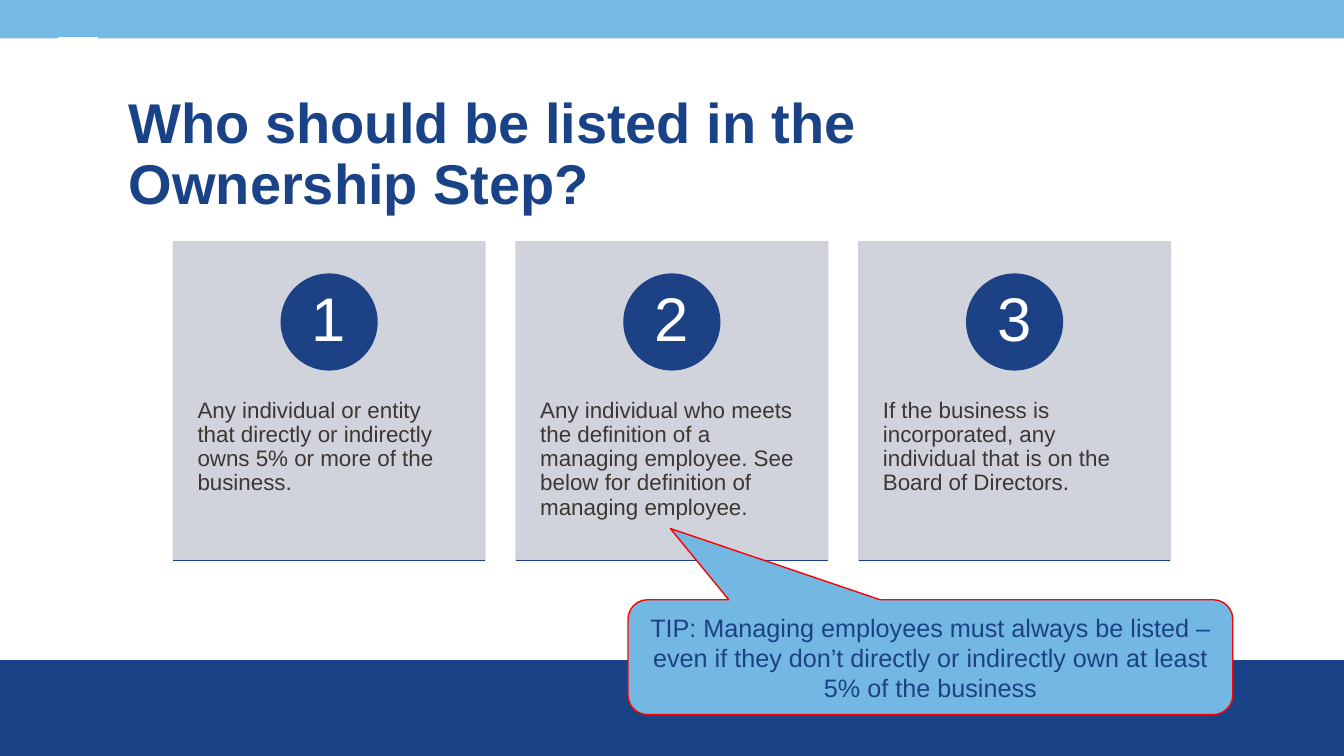
from dataclasses import dataclass

from lxml import etree
from pptx import Presentation
from pptx import util as u
from pptx.dml.color import RGBColor
from pptx.enum import shapes, text
from pptx.oxml.ns import qn


@dataclass(frozen=True)
class Theme:
    font: str = "Arial"
    footer: str = "1A4387"
    header: str = "75B9E5"
    white: str = "FFFFFF"
    card: str = "CDCFD9"
    accent: str = "1C4285"
    body: str = "3D3633"
    tip: str = "73B8E3"
    tip_line: str = "FF0000"
    title_size: int = 40
    number_size: int = 44
    body_size: int = 16
    tip_size: int = 18


theme = Theme()
Kind = shapes.MSO_SHAPE
Align = text.PP_ALIGN
Anchor = text.MSO_ANCHOR

deck = Presentation()
deck.slide_width, deck.slide_height = u.Pt(960), u.Pt(540)
page = deck.slides.add_slide(deck.slide_layouts[6])


def add_block(kind, left, top, width, height, fill, line=None, alpha=None):
    """Add a preset shape; alpha is the opacity of fill and line in percent."""
    block = page.shapes.add_shape(kind, u.Pt(left), u.Pt(top), u.Pt(width), u.Pt(height))
    block.shadow.inherit = False
    block.fill.solid()
    block.fill.fore_color.rgb = RGBColor.from_string(fill)
    if line:
        block.line.color.rgb = RGBColor.from_string(line)
        block.line.width = u.Pt(1)
    else:
        block.line.fill.background()
    if alpha:
        for color in block._element.spPr.iter(qn("a:srgbClr")):
            etree.SubElement(color, qn("a:alpha")).set("val", str(alpha * 1000))
    return block


def write(box, *lines, size, color, bold=False, align=Align.LEFT, anchor=Anchor.TOP,
          spacing=1.0, inset=(7.2, 3.6)):
    frame = box.text_frame
    frame.word_wrap = True
    frame.vertical_anchor = anchor
    frame.margin_left = frame.margin_right = u.Pt(inset[0])
    frame.margin_top = frame.margin_bottom = u.Pt(inset[1])
    for index, line in enumerate(lines):
        para = frame.add_paragraph() if index else frame.paragraphs[0]
        para.alignment = align
        para.line_spacing = spacing
        span = para.add_run()
        span.text = line
        span.font.name = theme.font
        span.font.size = u.Pt(size)
        span.font.bold = bold
        span.font.color.rgb = RGBColor.from_string(color)


# Page bands
add_block(Kind.RECTANGLE, 0, 471.6, 960, 68.4, theme.footer)
add_block(Kind.RECTANGLE, 0, 0, 960, 27.4, theme.header)
add_block(Kind.RECTANGLE, 41.8, 26.6, 28, 29.5, theme.white)

# Numbered cards
card_left, card_top, card_width, card_height, card_step = 123.8, 172.8, 222.6, 227.5, 244.8
circle_size, number_size = 68.4, 48.2
circle_top = 195.8
card_texts = [
    "Any individual or entity that directly or indirectly owns 5% or more of the business.",
    "Any individual who meets the definition of a managing employee. "
    "See below for definition of managing employee.",
    "If the business is incorporated, any individual that is on the Board of Directors.",
]
for number, card_text in enumerate(card_texts, start=1):
    left = card_left + (number - 1) * card_step
    bottom = card_top + card_height
    middle = left + card_width / 2
    add_block(Kind.RECTANGLE, left, card_top, card_width, card_height,
              theme.card, line=theme.card, alpha=90)
    body = page.shapes.add_textbox(u.Pt(left), u.Pt(259.2), u.Pt(card_width), u.Pt(136.8))
    write(body, card_text, size=theme.body_size, color=theme.body, spacing=0.9,
          inset=(17.3, 25.9))
    add_block(Kind.OVAL, middle - circle_size / 2, circle_top, circle_size, circle_size,
              theme.accent, line=theme.accent)
    label = page.shapes.add_textbox(
        u.Pt(middle - number_size / 2), u.Pt(circle_top + (circle_size - number_size) / 2),
        u.Pt(number_size), u.Pt(number_size))
    write(label, str(number), size=theme.number_size, color=theme.white, align=Align.CENTER,
          anchor=Anchor.MIDDLE, spacing=0.9, inset=(5, 0.7))
    rule = page.shapes.add_connector(shapes.MSO_CONNECTOR.STRAIGHT, u.Pt(left), u.Pt(bottom),
                                     u.Pt(left + card_width), u.Pt(bottom))
    rule.line.color.rgb = RGBColor.from_string(theme.accent)
    rule.line.width = u.Pt(1)
    etree.SubElement(rule._element.spPr, qn("a:effectLst"))

# Tip
tip = add_block(Kind.ROUNDED_RECTANGULAR_CALLOUT, 448.6, 428.4, 432, 82.1,
                theme.tip, line=theme.tip_line)
for index, value in enumerate((-0.43, -1.12, 0.17)):
    tip.adjustments[index] = value
write(tip, "TIP: Managing employees must always be listed –",
      "even if they don’t directly or indirectly own at least 5% of the business",
      size=theme.tip_size, color=theme.accent, align=Align.CENTER, anchor=Anchor.MIDDLE)

# Title
title = page.shapes.add_textbox(u.Pt(85), u.Pt(59), u.Pt(712), u.Pt(104.4))
write(title, "Who should be listed in the Ownership Step?", size=theme.title_size,
      color=theme.footer, bold=True, anchor=Anchor.MIDDLE, spacing=0.9)

deck.save("out.pptx")
